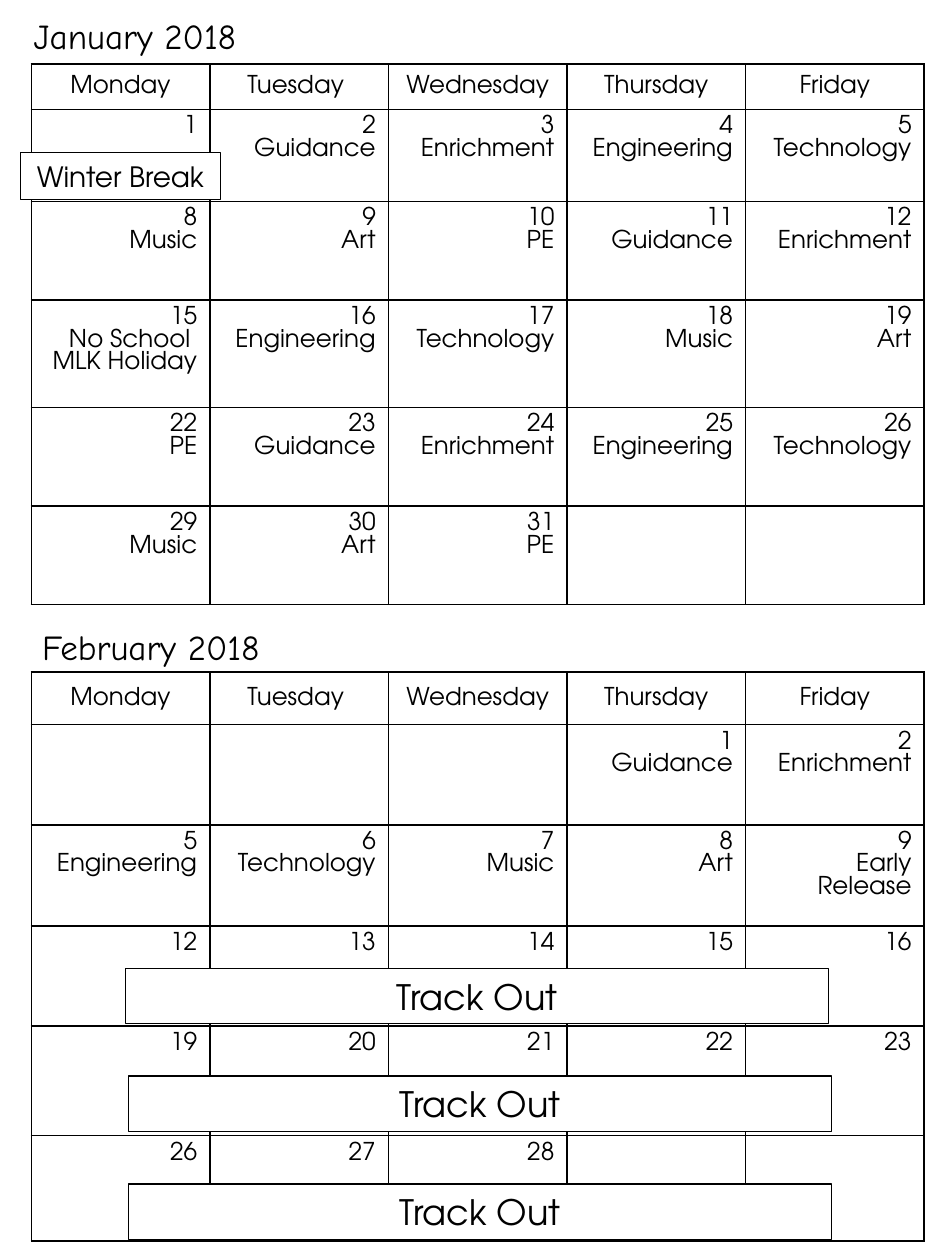
"""Build a two-month school specials calendar on one portrait page."""
from collections.abc import Iterator
from dataclasses import dataclass
from itertools import cycle

from lxml import etree
from pptx import Presentation, util as u
from pptx.dml.color import RGBColor
from pptx.enum import shapes, text
from pptx.oxml import ns


@dataclass(frozen=True)
class Theme:
    ink: str = "000000"
    paper: str = "FFFFFF"
    title_font: str = "Comic Neue"
    body_font: str = "TeX Gyre Adventor"
    title_size: int = 20
    body_size: int = 14
    grid_width: float = 1
    notice_width: float = 0.75


@dataclass(frozen=True)
class Month:
    name: str
    title_left: float
    title_top: float
    grid_top: float
    row_heights: tuple[float, ...]
    first_monday: int
    last_day: int
    special_days: dict[int, tuple[str, ...]]


@dataclass(frozen=True)
class Notice:
    wording: str
    left: float
    top: float
    width: float = 14.18
    height: float = 1.12
    size: int = 20


THEME = Theme()
GRID_LEFT, COLUMN_WIDTH = 0.63, 3.6
WEEKDAYS = ("Monday", "Tuesday ", "Wednesday", "Thursday", "Friday")
SPECIALS = ("Guidance", "Enrichment", "Engineering", "Technology", "Music", "Art", "PE")
TRACK_OUT_DAYS = {day: () for day in range(12, 29)}
MONTHS = (
    Month("January 2018", 0.43, 0.16, 1.29, (0.92, 1.85, 1.99, 2.16, 1.99, 1.99), 1, 31,
          {1: (), 15: ("No School ", "MLK Holiday")}),
    Month("February 2018", 0.6, 12.49, 13.55, (1.06, 2.02, 2.02, 2.02, 2.21, 2.12), -2, 28,
          {9: ("Early Release",)} | TRACK_OUT_DAYS),
)
NOTICES = (
    Notice("Track Out", 2.59, 23.87),
    Notice("Track Out", 2.59, 21.69),
    Notice("Track Out", 2.53, 19.52),
    Notice("Winter Break", 0.42, 3.07, 4.02, 0.95, 16),
)


def write(frame, wording: str, font: str, size: int, align) -> None:
    frame.text = wording
    for para in frame.paragraphs:
        para.alignment = align
        for span in para.runs:
            span.font.name = font
            span.font.size = u.Pt(size)
            span.font.color.rgb = RGBColor.from_string(THEME.ink)


def outline_cell(cell) -> None:
    properties = cell._tc.get_or_add_tcPr()
    for side in ("lnL", "lnR", "lnT", "lnB"):
        line = etree.SubElement(properties, ns.qn(f"a:{side}"), w=str(u.Pt(THEME.grid_width)))
        fill = etree.SubElement(line, ns.qn("a:solidFill"))
        etree.SubElement(fill, ns.qn("a:srgbClr"), val=THEME.ink)
    cell.fill.background()


def day_wording(month: Month, day: int, specials: Iterator[str]) -> str:
    if not 1 <= day <= month.last_day:
        return ""
    lines = month.special_days[day] if day in month.special_days else (next(specials),)
    return "\n".join((str(day), *lines))


def draw_month(page, month: Month, specials: Iterator[str]) -> None:
    frame = page.shapes.add_table(
        len(month.row_heights), len(WEEKDAYS), u.Cm(GRID_LEFT), u.Cm(month.grid_top),
        u.Cm(COLUMN_WIDTH * len(WEEKDAYS)), u.Cm(sum(month.row_heights)))
    table = frame.table
    table.first_row = table.horz_banding = False
    for column in table.columns:
        column.width = u.Cm(COLUMN_WIDTH)
    for row, height in zip(table.rows, month.row_heights):
        row.height = u.Cm(height)
    for week, row in enumerate(table.rows):
        for weekday, cell in enumerate(row.cells):
            outline_cell(cell)
            if week == 0:
                wording, align = WEEKDAYS[weekday], text.PP_ALIGN.CENTER
                cell.vertical_anchor = text.MSO_ANCHOR.MIDDLE
            else:
                day = month.first_monday + 7 * (week - 1) + weekday
                wording, align = day_wording(month, day, specials), text.PP_ALIGN.RIGHT
            if wording:
                write(cell.text_frame, wording, THEME.body_font, THEME.body_size, align)

    box = page.shapes.add_textbox(
        u.Cm(month.title_left), u.Cm(month.title_top), u.Cm(6.33), u.Cm(1.11))
    box.text_frame.word_wrap = True
    box.text_frame.auto_size = text.MSO_AUTO_SIZE.SHAPE_TO_FIT_TEXT
    write(box.text_frame, month.name, THEME.title_font, THEME.title_size, text.PP_ALIGN.LEFT)


def draw_notice(page, notice: Notice) -> None:
    box = page.shapes.add_shape(
        shapes.MSO_SHAPE.RECTANGLE, u.Cm(notice.left), u.Cm(notice.top),
        u.Cm(notice.width), u.Cm(notice.height))
    box.shadow.inherit = False
    box.fill.solid()
    box.fill.fore_color.rgb = RGBColor.from_string(THEME.paper)
    box.line.color.rgb = RGBColor.from_string(THEME.ink)
    box.line.width = u.Pt(THEME.notice_width)
    box.text_frame.word_wrap = True
    box.text_frame.auto_size = text.MSO_AUTO_SIZE.SHAPE_TO_FIT_TEXT
    write(box.text_frame, notice.wording, THEME.body_font, notice.size, text.PP_ALIGN.CENTER)


def main() -> None:
    deck = Presentation()
    deck.slide_width, deck.slide_height = u.Cm(19.05), u.Cm(25.4)
    page = deck.slides.add_slide(deck.slide_layouts[6])
    specials = cycle(SPECIALS)
    for month in MONTHS:
        draw_month(page, month, specials)
    for notice in NOTICES:
        draw_notice(page, notice)
    deck.save("out.pptx")


if __name__ == "__main__":
    main()
